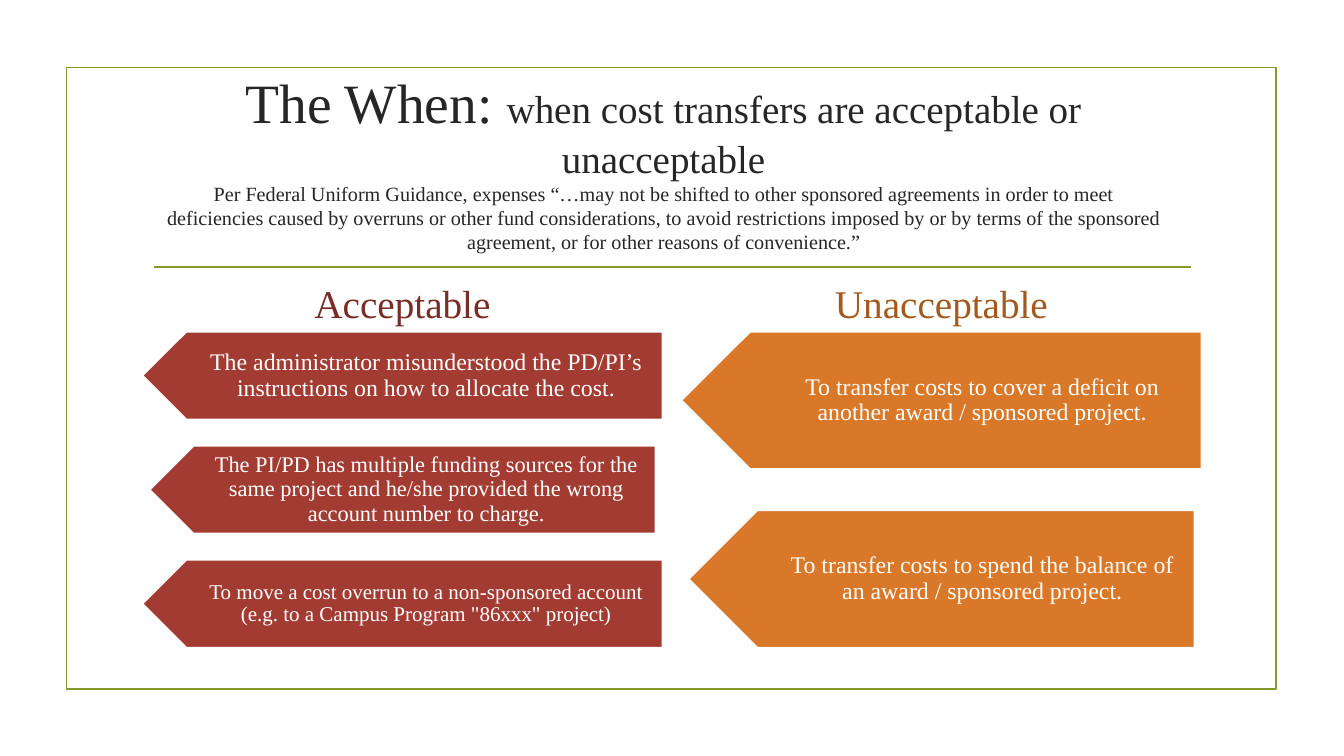
"""Build the slide on when cost transfers are acceptable or unacceptable."""
from dataclasses import dataclass

from lxml import etree
from pptx import Presentation, util as u
from pptx.dml.color import RGBColor
from pptx.enum import shapes, text
from pptx.oxml import ns

FONT = "Times New Roman"
COLOURS = {
    "frame": "83992A", "title": "262626", "white": "FFFFFF",
    "red": "A23C33", "dark red": "7A2D26",
    "orange": "D97828", "dark orange": "A45A1D",
}
WIDTH, HEIGHT = u.Inches(13.33), u.Inches(7.5)
COLUMN_WIDTH, HEADING_TOP, HEADING_HEIGHT = 38.7, 35.47, 8.4
ARROWS_TOP, ARROWS_HEIGHT, GAP_SHARE = 43.87, 41.8, 0.3
EVEN_ROW_INDENT = 0.53


@dataclass(frozen=True)
class Reason:
    wording: str
    size: int = 17


@dataclass(frozen=True)
class Column:
    placeholder: int
    left: float
    heading: str
    heading_colour: str
    fill: str
    reasons: tuple[Reason, ...]


COLUMNS = (
    Column(1, 10.6, "Acceptable", "dark red", "red", (
        Reason("The administrator misunderstood the PD/PI’s instructions on how to allocate the cost."),
        Reason("The PI/PD has multiple funding sources for the same project and he/she "
               "provided the wrong account number to charge.", 16),
        Reason('To move a cost overrun to a non-sponsored account (e.g. to a Campus Program "86xxx" project)', 15),
    )),
    Column(3, 50.7, "Unacceptable", "dark orange", "orange", (
        Reason("To transfer costs to cover a deficit on another award / sponsored project."),
        Reason("To transfer costs to spend the balance of an award / sponsored project."),
    )),
)
TITLE_LINES = (
    (("The When: ", 39.6), ("when cost transfers are acceptable or unacceptable", 27.9)),
    (("Per Federal Uniform Guidance, expenses “…may not be shifted to other "
      "sponsored agreements in order to meet", 14.4),),
    (("deficiencies caused by overruns or other fund considerations, to avoid "
      "restrictions imposed by or by terms of the sponsored", 14.4),),
    (("agreement, or for other reasons of convenience.”", 14.4),),
)


def across(percent: float) -> int:
    return round(WIDTH * percent / 100)


def down(percent: float) -> int:
    return round(HEIGHT * percent / 100)


def box(left: float, top: float, width: float, height: float) -> tuple[int, int, int, int]:
    return across(left), down(top), across(width), down(height)


def colour(name: str) -> RGBColor:
    return RGBColor.from_string(COLOURS[name])


def place(shape, bounds: tuple[int, int, int, int]) -> None:
    shape.left, shape.top, shape.width, shape.height = bounds


def format_text(frame, colour_name: str, anchor, size: float | None = None) -> None:
    frame.word_wrap = True
    frame.auto_size = text.MSO_AUTO_SIZE.NONE
    frame.vertical_anchor = anchor
    paragraph = frame.paragraphs[0]
    paragraph.alignment = text.PP_ALIGN.CENTER
    paragraph.space_before = u.Pt(0)
    paragraph.font.name = FONT
    paragraph.font.bold = False
    paragraph.font.color.rgb = colour(colour_name)
    if size is not None:
        paragraph.font.size = u.Pt(size)


def draw_frame(slide) -> None:
    frame = slide.shapes.add_shape(shapes.MSO_SHAPE.RECTANGLE, *box(4.95, 8.93, 90, 82.27))
    frame.shadow.inherit = False
    frame.fill.background()
    rule = slide.shapes.add_connector(
        shapes.MSO_CONNECTOR.STRAIGHT, across(11.48), down(35.33), across(88.6), down(35.33))
    etree.SubElement(rule._element.spPr, ns.qn("a:effectLst"))
    for shape in (frame, rule):
        shape.line.color.rgb = colour("frame")
        shape.line.width = u.Pt(1.25)


def draw_title(slide) -> None:
    title = slide.shapes.title
    place(title, box(10, 10.93, 78.75, 20.67))
    paragraph = title.text_frame.paragraphs[0]
    for index, line in enumerate(TITLE_LINES):
        if index:
            paragraph.add_line_break()
        for wording, size in line:
            run = paragraph.add_run()
            run.text = wording
            run.font.size = u.Pt(size)
    format_text(title.text_frame, "title", text.MSO_ANCHOR.MIDDLE)


def draw_arrow(slide, reason: Reason, fill: str, bounds: tuple[int, int, int, int]) -> None:
    left, top, width, height = bounds
    arrow = slide.shapes.add_shape(shapes.MSO_SHAPE.PENTAGON, *bounds)
    arrow.rotation = 180
    arrow.shadow.inherit = False
    arrow.fill.solid()
    arrow.fill.fore_color.rgb = colour(fill)
    arrow.line.color.rgb = colour("white")
    arrow.line.width = u.Pt(1.25)

    indent = height // 4
    label = slide.shapes.add_textbox(left + indent, top, width - indent, height)
    frame = label.text_frame
    frame.text = reason.wording
    frame.margin_left = round(height * 0.44)
    frame.margin_right = u.Inches(0.13)
    frame.margin_top = frame.margin_bottom = u.Inches(0.07)
    format_text(frame, "white", text.MSO_ANCHOR.MIDDLE, reason.size)
    frame.paragraphs[0].line_spacing = 0.9


def draw_column(slide, column: Column) -> None:
    heading = slide.placeholders[column.placeholder]
    place(heading, box(column.left, HEADING_TOP, COLUMN_WIDTH, HEADING_HEIGHT))
    heading.text_frame.text = column.heading
    format_text(heading.text_frame, column.heading_colour, text.MSO_ANCHOR.BOTTOM, 28)

    count = len(column.reasons)
    height = ARROWS_HEIGHT / (count + GAP_SHARE * (count - 1))
    for row, reason in enumerate(column.reasons):
        indent = EVEN_ROW_INDENT * (row % 2)
        top = ARROWS_TOP + row * height * (1 + GAP_SHARE)
        bounds = box(column.left + indent, top, COLUMN_WIDTH - 2 * indent, height)
        draw_arrow(slide, reason, column.fill, bounds)


def main() -> None:
    presentation = Presentation()
    presentation.slide_width, presentation.slide_height = WIDTH, HEIGHT
    slide = presentation.slides.add_slide(presentation.slide_layouts.get_by_name("Comparison"))
    for index in (2, 4):
        unused = slide.placeholders[index]._element
        unused.getparent().remove(unused)
    draw_frame(slide)
    draw_title(slide)
    for column in COLUMNS:
        draw_column(slide, column)
    presentation.save("out.pptx")


if __name__ == "__main__":
    main()
